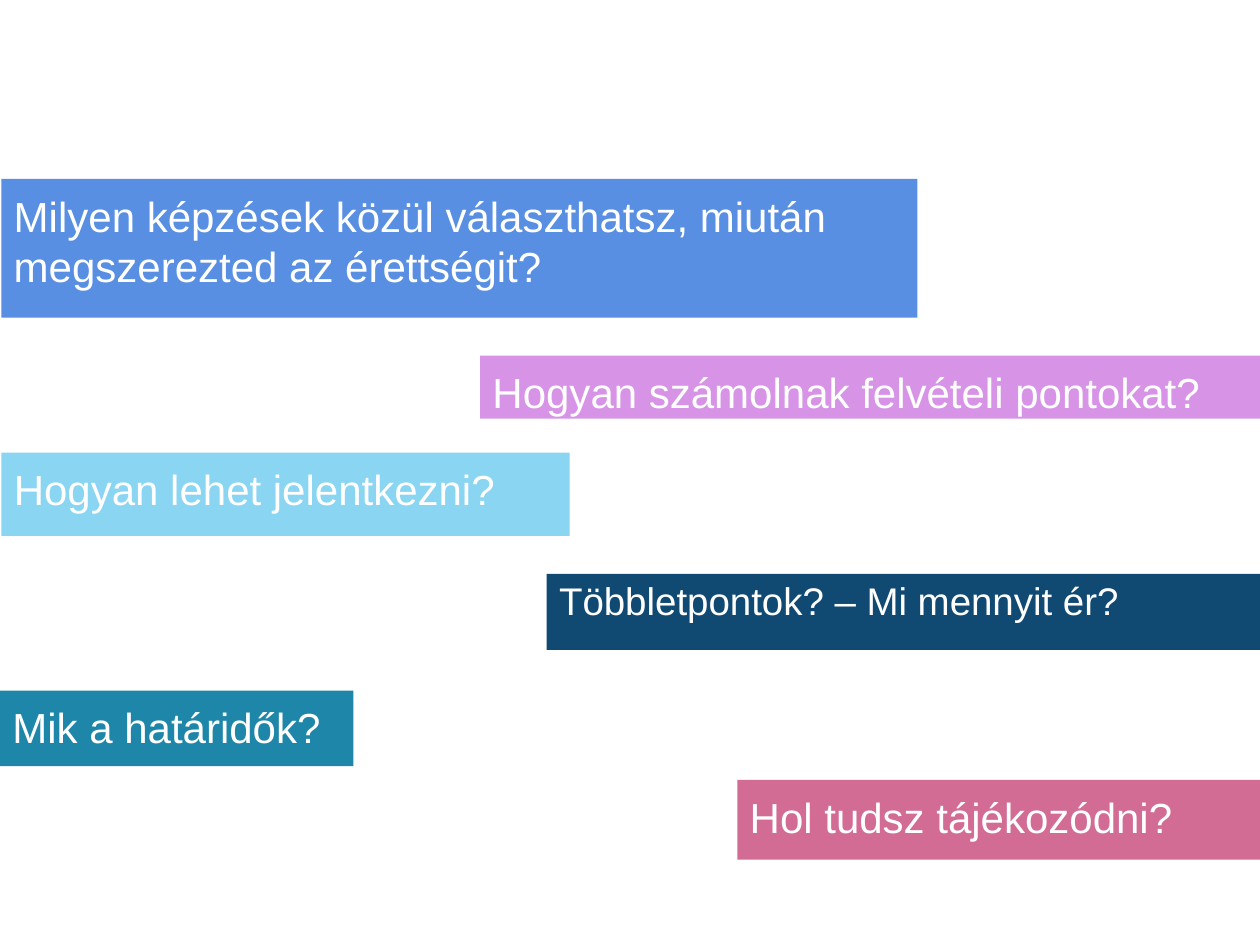
from dataclasses import dataclass

from pptx import Presentation
from pptx.dml.color import RGBColor
from pptx.enum.shapes import MSO_SHAPE
from pptx.enum.text import MSO_ANCHOR, PP_ALIGN
from pptx.util import Pt


@dataclass(frozen=True)
class Theme:
    """Colours, font and type sizes of the slide."""
    font: str = "Arial"
    large: float = 24
    small: float = 22
    white: str = "FFFFFF"
    blue: str = "588FE2"
    lilac: str = "D794E6"
    sky: str = "89D5F2"
    navy: str = "104972"
    teal: str = "1E86A8"
    rose: str = "D36C94"


class Deck:
    """Holds the theme and the current slide."""

    def __init__(self, theme, width, height):
        """Start a file with one blank slide."""
        self.theme = theme
        self.width = width
        self.file = Presentation()
        self.file.slide_width = Pt(width)
        self.file.slide_height = Pt(height)
        self.slide = self.file.slides.add_slide(self.file.slide_layouts[6])

    def bar(self, text, fill, top, width, height, left=None, size=None, inset=6.4, pitch=1.0):
        """Add a question bar, flush right unless left is given."""
        if left is None:
            left = self.width - width
        box = self.slide.shapes.add_shape(
            MSO_SHAPE.RECTANGLE, Pt(left), Pt(top), Pt(width), Pt(height))
        box.shadow.inherit = False
        box.fill.solid()
        box.fill.fore_color.rgb = RGBColor.from_string(fill)
        box.line.fill.background()
        frame = box.text_frame
        frame.word_wrap = True
        frame.vertical_anchor = MSO_ANCHOR.TOP
        frame.margin_top = Pt(inset)
        frame.margin_bottom = Pt(0)
        line = frame.paragraphs[0]
        line.alignment = PP_ALIGN.LEFT
        line.line_spacing = pitch
        self.run(line, text, size or self.theme.large)

    def run(self, line, text, size):
        """Add one white run to a paragraph."""
        run = line.add_run()
        run.text = text
        run.font.name = self.theme.font
        run.font.size = Pt(size)
        run.font.color.rgb = RGBColor.from_string(self.theme.white)

    def save(self):
        """Write the file."""
        self.file.save("out.pptx")


def main():
    """Build the slide of questions."""
    theme = Theme()
    deck = Deck(theme, 720, 540)
    deck.bar("Milyen képzések közül választhatsz, miután megszerezted az érettségit?",
             theme.blue, 102.3, 523.5, 79.3, left=0.8)
    deck.bar("Hogyan számolnak felvételi pontokat?", theme.lilac, 203.3, 445.7, 36)
    deck.bar("Hogyan lehet jelentkezni?", theme.sky, 258.6, 324.7, 47.6, left=0.8)
    deck.bar("Többletpontok? – Mi mennyit ér?", theme.navy, 328, 407.6, 43.4,
             size=theme.small, inset=5, pitch=0.9)
    deck.bar("Mik a határidők?", theme.teal, 394.7, 202, 43.2, left=0)
    deck.bar("Hol tudsz tájékozódni?", theme.rose, 445.6, 298.7, 45.6)
    deck.save()


if __name__ == "__main__":
    main()
